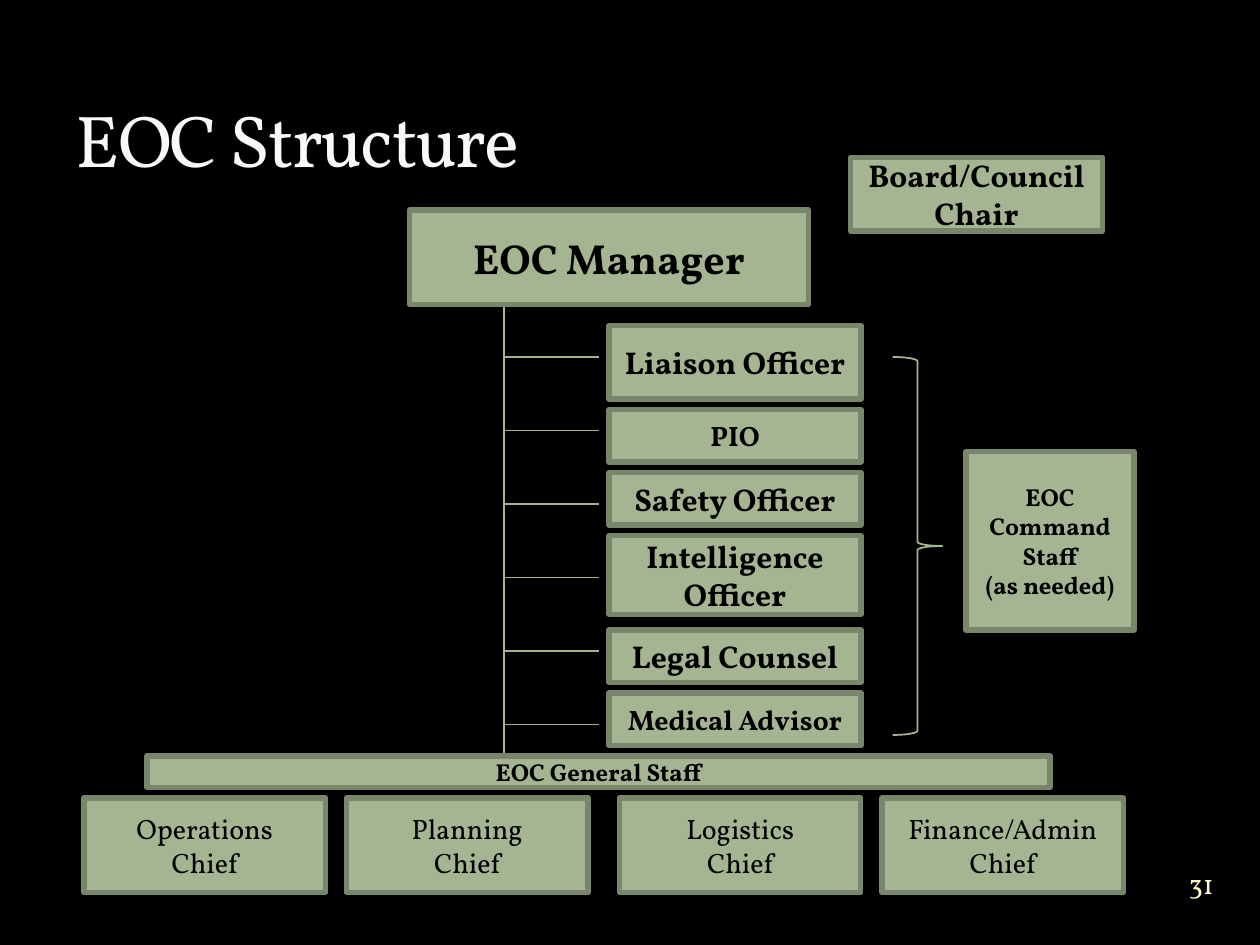
from lxml.etree import SubElement
from pptx import Presentation
from pptx.dml.color import RGBColor
from pptx.enum.shapes import MSO_CONNECTOR, MSO_SHAPE
from pptx.enum.text import MSO_ANCHOR, PP_ALIGN
from pptx.oxml.ns import qn
from pptx.util import Pt

BLACK = RGBColor(0x00, 0x00, 0x00)
WHITE = RGBColor(0xF9, 0xF9, 0xF9)
CREAM = RGBColor(0xFE, 0xFA, 0xC9)
SAGE = RGBColor(0xA5, 0xB5, 0x92)
DARK_SAGE = RGBColor(0x7A, 0x86, 0x6C)
FONT = "Vollkorn"


def write(frame, text, size, color=BLACK, bold=False, align=PP_ALIGN.CENTER,
          anchor=MSO_ANCHOR.MIDDLE, spacing=0):
    """Fill a text frame, one paragraph per line of text."""
    frame.word_wrap = True
    frame.vertical_anchor = anchor
    frame.text = text
    for paragraph in frame.paragraphs:
        paragraph.alignment = align
        for run in paragraph.runs:
            run.font.name = FONT
            run.font.size = Pt(size)
            run.font.bold = bold
            run.font.color.rgb = color
            if spacing:
                run._r.get_or_add_rPr().set("spc", str(spacing * 100))


def add_line(x1, y1, x2, y2):
    line = slide.shapes.add_connector(
        MSO_CONNECTOR.STRAIGHT, Pt(x1), Pt(y1), Pt(x2), Pt(y2))
    line.line.color.rgb = SAGE
    line.line.width = Pt(1)
    SubElement(line._element.spPr, qn("a:effectLst"))


presentation = Presentation()
presentation.slide_width = Pt(720)
presentation.slide_height = Pt(540)
slide = presentation.slides.add_slide(presentation.slide_layouts[5])
slide.background.fill.solid()
slide.background.fill.fore_color.rgb = BLACK

# Title
title = slide.shapes.title
title.left, title.top, title.width, title.height = Pt(36), Pt(12), Pt(648), Pt(96)
write(title.text_frame, "EOC Structure", 42, color=WHITE, align=PP_ALIGN.LEFT,
      anchor=MSO_ANCHOR.BOTTOM, spacing=-1)

# Trunk from the manager to the general staff, with a branch per officer
trunk_x = 288
add_line(trunk_x, 174, trunk_x, 432)
for branch in range(6):
    branch_y = 204 + 42 * branch
    add_line(trunk_x, branch_y, 342, branch_y)

# Brace that gathers the command staff
brace = slide.shapes.add_shape(
    MSO_SHAPE.RIGHT_BRACE, Pt(510), Pt(204), Pt(28.5), Pt(216))
brace.shadow.inherit = False
brace.fill.background()
brace.line.color.rgb = SAGE
brace.line.width = Pt(1)

# Roles: text, left, top, width, height, size, bold
roles = [
    ("EOC Manager", 234, 120, 228, 54, 24, True),
    ("Board/Council Chair", 486, 90, 144, 42, 18, True),
    ("EOC Command Staff\n(as needed)", 552, 258, 96, 102, 14, True),
    ("EOC General Staff", 84, 432, 516, 18, 14, True),
]
officers = [
    ("Liaison Officer", 186, 42, 18),
    ("PIO", 234, 30, 16),
    ("Safety Officer", 270, 30, 18),
    ("Intelligence Officer", 306, 45, 18),
    ("Legal Counsel", 360, 30, 18),
    ("Medical Advisor", 396, 30, 16),
]
for officer, top, height, size in officers:
    roles.append((officer, 348, top, 144, height, size, True))
chiefs = [("Operations", 48), ("Planning", 198), ("Logistics", 354),
          ("Finance/Admin", 504)]
for section, left in chiefs:
    roles.append((f"{section}\nChief", left, 456, 138, 54, 16, False))

for role, left, top, width, height, size, bold in roles:
    box = slide.shapes.add_shape(
        MSO_SHAPE.RECTANGLE, Pt(left), Pt(top), Pt(width), Pt(height))
    box.shadow.inherit = False
    box.fill.solid()
    box.fill.fore_color.rgb = SAGE
    box.line.color.rgb = DARK_SAGE
    box.line.width = Pt(3)
    write(box.text_frame, role, size, bold=bold)

# Page number
page_number = slide.shapes.add_textbox(Pt(662.4), Pt(487), Pt(48), Pt(36)).text_frame
page_number.margin_left = page_number.margin_right = 0
page_number.margin_top = page_number.margin_bottom = 0
write(page_number, "31", 16, color=CREAM)

presentation.save("out.pptx")
